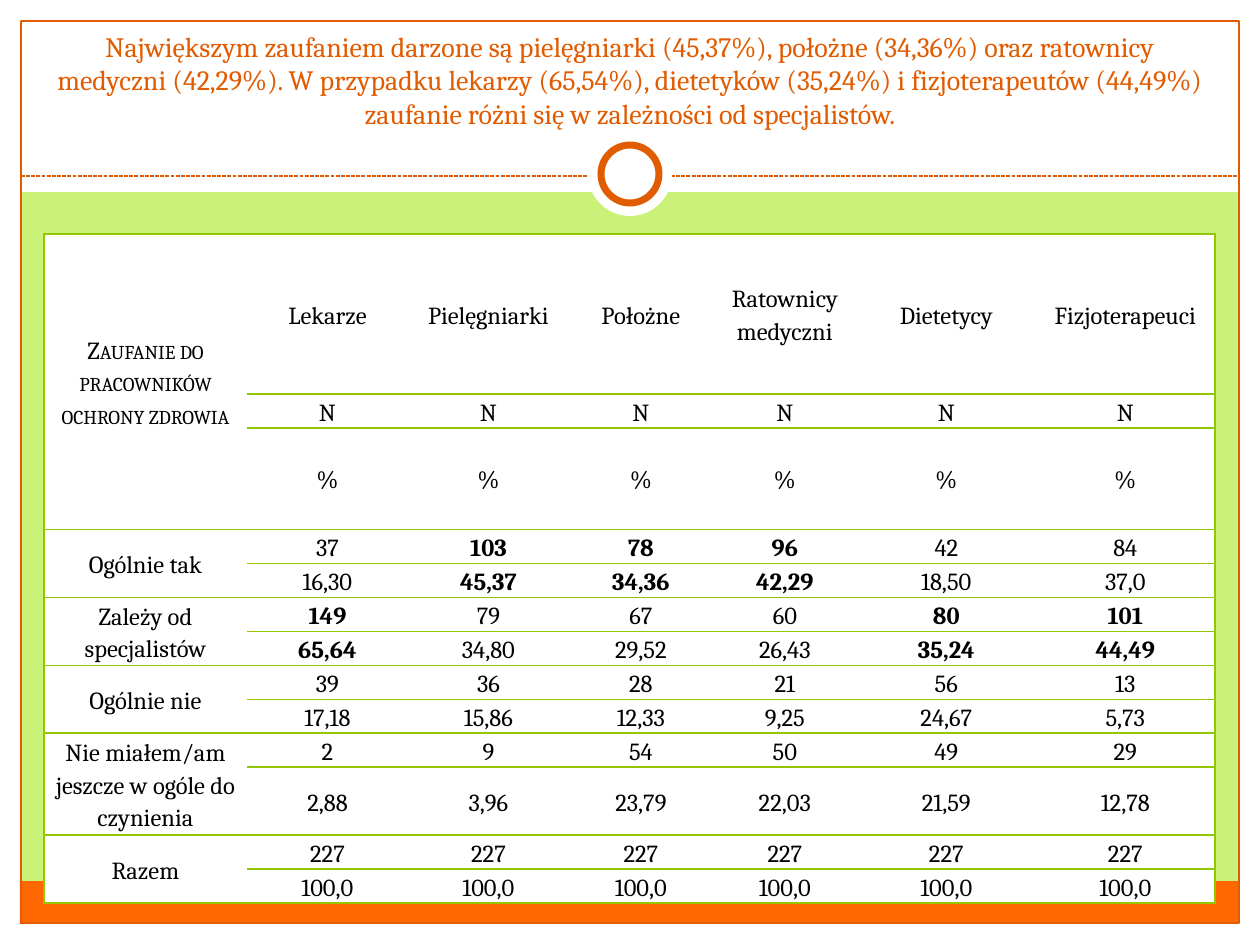
from lxml.etree import SubElement
from pptx import Presentation
from pptx.dml.color import RGBColor
from pptx.enum.dml import MSO_LINE
from pptx.enum.shapes import MSO_CONNECTOR, MSO_SHAPE
from pptx.enum.text import MSO_ANCHOR as ANCHOR, PP_ALIGN as ALIGN
from pptx.oxml.ns import qn
from pptx.util import Emu, Pt

SCALE = 914400 / 126
COLORS = {
    "white": "FFFFFF", "black": "000000", "lime": "CAF278",
    "orange": "FF6700", "rust": "E15B00", "green": "94C600",
}
FONT = "Cambria"
TITLE = (
    "Największym zaufaniem darzone są pielęgniarki (45,37%), położne (34,36%) "
    "oraz ratownicy medyczni (42,29%). W przypadku lekarzy (65,54%), dietetyków "
    "(35,24%) i fizjoterapeutów (44,49%) zaufanie różni się w zależności od "
    "specjalistów."
)
CORNER = "Zaufanie do pracowników ochrony zdrowia"
GROUPS = ["Lekarze", "Pielęgniarki", "Położne", "Ratownicy medyczni",
          "Dietetycy", "Fizjoterapeuci"]
ANSWERS = [
    ("Ogólnie tak", [37, 103, 78, 96, 42, 84],
     ["16,30", "45,37", "34,36", "42,29", "18,50", "37,0"]),
    ("Zależy od specjalistów", [149, 79, 67, 60, 80, 101],
     ["65,64", "34,80", "29,52", "26,43", "35,24", "44,49"]),
    ("Ogólnie nie", [39, 36, 28, 21, 56, 13],
     ["17,18", "15,86", "12,33", "9,25", "24,67", "5,73"]),
    ("Nie miałem/am jeszcze w ogóle do czynienia", [2, 9, 54, 50, 49, 29],
     ["2,88", "3,96", "23,79", "22,03", "21,59", "12,78"]),
]
TOTAL = ("Razem", [227] * 6, ["100,0"] * 6)
COL_WIDTHS = [203, 161, 161, 144, 144, 179, 179]
ROW_HEIGHTS = [160, 34, 97] + [34] * 7 + [68, 34, 34]


def px(n):
    return Emu(round(n * SCALE))


def rgb(name):
    return RGBColor.from_string(COLORS[name])


def set_all(obj, values):
    for name, value in values.items():
        setattr(obj, name, value)


class SlideBuilder:
    def __init__(self, prs):
        self.s = prs.slides.add_slide(prs.slide_layouts[6])

    def background(self, color):
        fill = self.s.background.fill
        fill.solid()
        fill.fore_color.rgb = rgb(color)

    def shape(self, kind, box, fill=None, line=None, width=0.75):
        sp = self.s.shapes.add_shape(kind, *map(px, box))
        sp.shadow.inherit = False
        if fill:
            sp.fill.solid()
            sp.fill.fore_color.rgb = rgb(fill)
        else:
            sp.fill.background()
        if line:
            sp.line.color.rgb = rgb(line)
            sp.line.width = Pt(width)
        else:
            sp.line.fill.background()

    def dashed_line(self, x1, y1, x2, y2, color):
        line = self.s.shapes.add_connector(
            MSO_CONNECTOR.STRAIGHT, *map(px, (x1, y1, x2, y2)))
        line.line.color.rgb = rgb(color)
        set_all(line.line, {"width": Pt(0.75), "dash_style": MSO_LINE.SQUARE_DOT})
        SubElement(line._element.spPr, qn("a:effectLst"))

    def text(self, tf, text, size, color, bold=False, spacing=None):
        tf.word_wrap = True
        p = tf.paragraphs[0]
        set_all(p, {"alignment": ALIGN.CENTER, "line_spacing": spacing})
        r = p.add_run()
        r.text = text
        set_all(r.font, {"name": FONT, "size": Pt(size), "bold": bold})
        r.font.color.rgb = rgb(color)
        return r

    def title(self, box, text):
        tf = self.s.shapes.add_textbox(*map(px, box)).text_frame
        tf.vertical_anchor = ANCHOR.BOTTOM
        self.text(tf, text, 16, "rust")

    def table(self, x, y, widths, heights):
        frame = self.s.shapes.add_table(
            len(heights), len(widths), px(x), px(y), px(sum(widths)), px(sum(heights)))
        table = frame.table
        set_all(table, {"first_row": False, "horz_banding": False})
        for col, width in zip(table.columns, widths):
            col.width = px(width)
        for row, height in zip(table.rows, heights):
            row.height = px(height)
            for i, cell in enumerate(row.cells):
                self.cell_style(cell, i == 0, i == len(widths) - 1)
        return table

    def cell_style(self, cell, first, last):
        """White cell with ruled rows and a border on the table's outer sides."""
        set_all(cell, {
            "vertical_anchor": ANCHOR.MIDDLE, "margin_left": px(9),
            "margin_right": px(9), "margin_top": 0, "margin_bottom": 0})
        tc_pr = cell._tc.get_or_add_tcPr()
        for side, ruled in {"L": first, "R": last, "T": True, "B": True}.items():
            ln = SubElement(tc_pr, qn(f"a:ln{side}"), w=str(int(Pt(1))))
            if ruled:
                fill = SubElement(ln, qn("a:solidFill"))
                SubElement(fill, qn("a:srgbClr"), val=COLORS["green"])
            else:
                SubElement(ln, qn("a:noFill"))
        cell.fill.solid()
        cell.fill.fore_color.rgb = rgb("white")

    def cell_text(self, cell, text, bold=False):
        return self.text(cell.text_frame, str(text), 14, "black", bold, 1.15)


def fill_trust_table(slide, table):
    table.cell(0, 0).merge(table.cell(2, 0))
    corner = slide.cell_text(table.cell(0, 0), CORNER)
    corner._r.get_or_add_rPr().set("cap", "small")
    for col, group in enumerate(GROUPS, 1):
        for row, text in enumerate((group, "N", "%")):
            slide.cell_text(table.cell(row, col), text)

    highest = [max(column) for column in zip(*(counts for _, counts, _ in ANSWERS))]
    for i, (label, counts, shares) in enumerate(ANSWERS + [TOTAL]):
        row = 3 + 2 * i
        table.cell(row, 0).merge(table.cell(row + 1, 0))
        slide.cell_text(table.cell(row, 0), label)
        for col, (count, share, top) in enumerate(zip(counts, shares, highest), 1):
            slide.cell_text(table.cell(row, col), count, count == top)
            slide.cell_text(table.cell(row + 1, col), share, count == top)


def main():
    prs = Presentation()
    set_all(prs, {"slide_width": px(1260), "slide_height": px(945)})
    slide = SlideBuilder(prs)
    slide.background("lime")
    for box in [(0, 924, 1260, 21), (0, 0, 1260, 192),
                (0, 0, 21, 945), (1239, 0, 21, 945)]:
        slide.shape(MSO_SHAPE.RECTANGLE, box, "white")
    slide.shape(MSO_SHAPE.RECTANGLE, (20, 881, 1218, 43), "orange")
    slide.shape(MSO_SHAPE.RECTANGLE, (21, 21, 1218, 902), line="rust")
    slide.dashed_line(21, 176, 1239, 176, "rust")
    slide.shape(MSO_SHAPE.OVAL, (588, 132, 84, 84), "white")
    slide.shape(MSO_SHAPE.OVAL, (601, 145, 58, 58), "white", "rust", 4)
    slide.title((42, 31, 1176, 105), TITLE)
    fill_trust_table(slide, slide.table(44, 234, COL_WIDTHS, ROW_HEIGHTS))
    prs.save("out.pptx")


if __name__ == "__main__":
    main()
